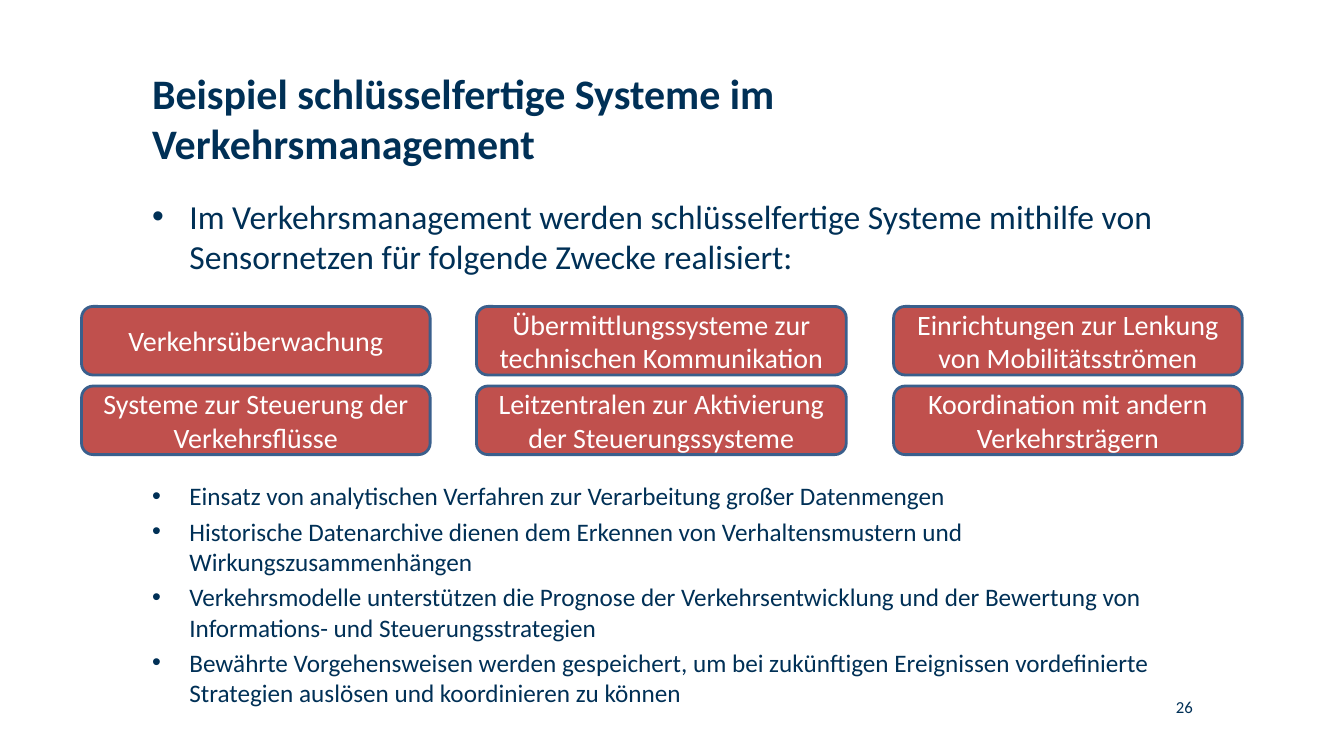
from dataclasses import dataclass

from lxml.etree import SubElement
from pptx import Presentation
from pptx.dml.color import RGBColor
from pptx.enum.shapes import MSO_SHAPE
from pptx.enum.text import MSO_ANCHOR, PP_ALIGN
from pptx.oxml.ns import qn
from pptx.slide import Slide
from pptx.text.text import TextFrame
from pptx.util import Inches, Pt

COLORS = {"navy": "003056", "red": "C0504D", "outline": "3A5F8C", "white": "FFFFFF"}
INDENT = Inches(0.37)
LEFT = 1.51


@dataclass(frozen=True)
class TextBlock:
    left: float
    top: float
    width: float
    height: float
    size: int
    lines: tuple[str, ...]
    bold: bool = False
    bullet: bool = False
    align: PP_ALIGN = PP_ALIGN.LEFT


@dataclass(frozen=True)
class Column:
    left: float
    width: float
    labels: tuple[str, str]


BLOCKS = (
    TextBlock(LEFT, 0.67, 7.06, 1.37, 30,
              ("Beispiel schlüsselfertige Systeme im Verkehrsmanagement",), bold=True),
    TextBlock(LEFT, 1.94, 10.31, 0.98, 24,
              ("Im Verkehrsmanagement werden schlüsselfertige Systeme mithilfe von "
               "Sensornetzen für folgende Zwecke realisiert:",), bullet=True),
    TextBlock(LEFT, 4.77, 10.59, 2.06, 18, (
        "Einsatz von analytischen Verfahren zur Verarbeitung großer Datenmengen",
        "Historische Datenarchive dienen dem Erkennen von Verhaltensmustern und "
        "Wirkungszusammenhängen",
        "Verkehrsmodelle unterstützen die Prognose der Verkehrsentwicklung und der "
        "Bewertung von Informations- und Steuerungsstrategien",
        "Bewährte Vorgehensweisen werden gespeichert, um bei zukünftigen Ereignissen "
        "vordefinierte Strategien auslösen und koordinieren zu können",
    ), bullet=True),
    TextBlock(10.3, 6.91, 1.54, 0.2, 12, ("26",), align=PP_ALIGN.RIGHT),
)

COLUMNS = (
    Column(0.81, 3.46, ("Verkehrsüberwachung",
                        "Systeme zur Steuerung der Verkehrsflüsse")),
    Column(4.73, 3.67, ("Übermittlungssysteme zur technischen Kommunikation",
                        "Leitzentralen zur Aktivierung der Steuerungssysteme")),
    Column(8.87, 3.46, ("Einrichtungen zur Lenkung von Mobilitätsströmen",
                        "Koordination mit andern Verkehrsträgern")),
)
ROW_TOP, ROW_STEP, ROW_HEIGHT = 3.04, 0.79, 0.68


def color(name: str) -> RGBColor:
    return RGBColor.from_string(COLORS[name])


def write_lines(frame: TextFrame, lines: tuple[str, ...], size: int, color_name: str,
                align: PP_ALIGN, bold: bool = False, bullet: bool = False) -> None:
    frame.word_wrap = True
    font_format = {"name": "Calibri", "size": Pt(size), "bold": bold}
    for index, line in enumerate(lines):
        para = frame.add_paragraph() if index else frame.paragraphs[0]
        para.alignment = align
        span = para.add_run()
        span.text = line
        for key, value in font_format.items():
            setattr(span.font, key, value)
        span.font.color.rgb = color(color_name)
        if bullet:
            para.space_before = Pt(size * 0.2)
            properties = para._p.get_or_add_pPr()
            properties.set("marL", str(INDENT))
            properties.set("indent", str(-INDENT))
            SubElement(properties, qn("a:buFont"), typeface="Arial")
            SubElement(properties, qn("a:buChar"), char="•")


def draw_block(page: Slide, block: TextBlock) -> None:
    box = page.shapes.add_textbox(Inches(block.left), Inches(block.top),
                                  Inches(block.width), Inches(block.height))
    for side in ("left", "top", "right", "bottom"):
        setattr(box.text_frame, f"margin_{side}", 0)
    write_lines(box.text_frame, block.lines, block.size, "navy", block.align,
                block.bold, block.bullet)


def draw_column(page: Slide, column: Column) -> None:
    for row, label in enumerate(column.labels):
        box = page.shapes.add_shape(
            MSO_SHAPE.ROUNDED_RECTANGLE, Inches(column.left),
            Inches(ROW_TOP + row * ROW_STEP), Inches(column.width), Inches(ROW_HEIGHT))
        box.shadow.inherit = False
        box.fill.solid()
        box.fill.fore_color.rgb = color("red")
        box.line.color.rgb = color("outline")
        box.line.width = Pt(2)
        box.text_frame.vertical_anchor = MSO_ANCHOR.MIDDLE
        write_lines(box.text_frame, (label,), 20, "white", PP_ALIGN.CENTER)


def main() -> None:
    deck = Presentation()
    deck.slide_width = Inches(13.34)
    deck.slide_height = Inches(7.5)
    page = deck.slides.add_slide(deck.slide_layouts[6])
    for block in BLOCKS:
        draw_block(page, block)
    for column in COLUMNS:
        draw_column(page, column)
    deck.save("out.pptx")


if __name__ == "__main__":
    main()
